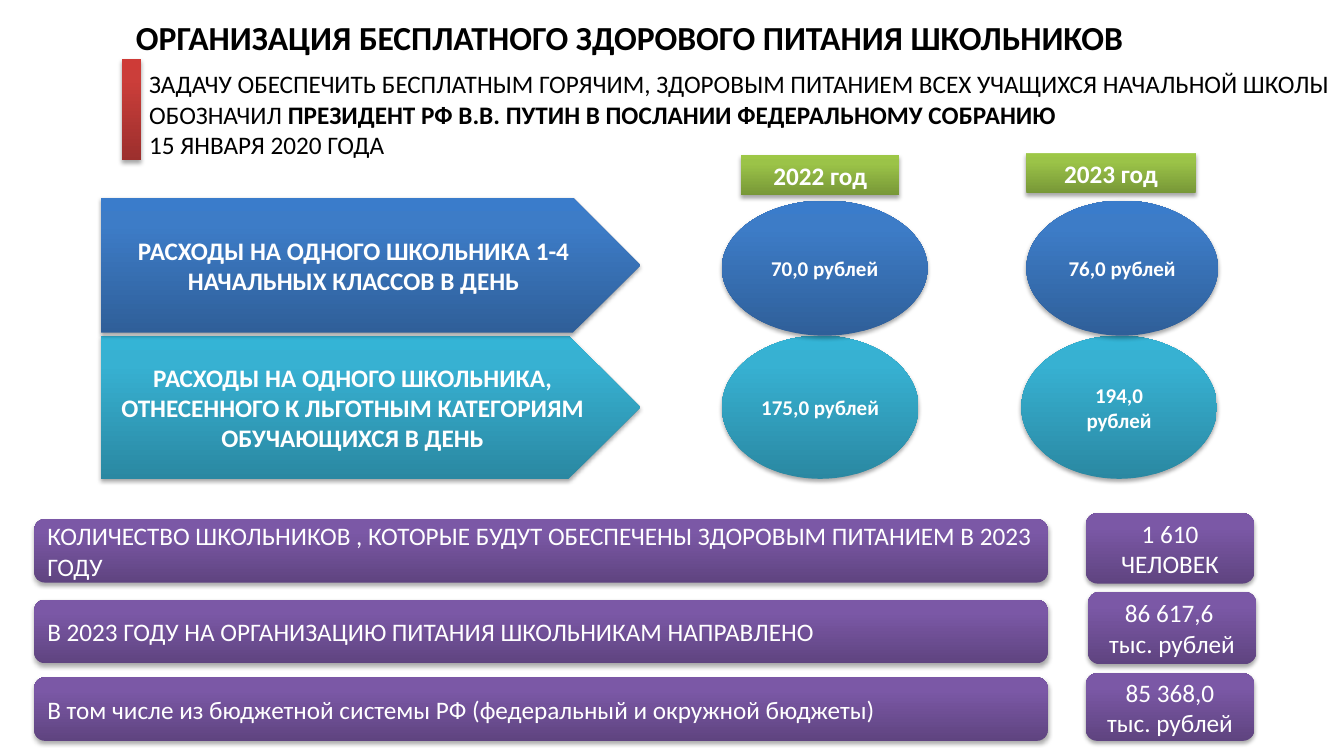
from copy import deepcopy

from lxml import etree
from pptx import Presentation
from pptx.dml.color import RGBColor
from pptx.enum import shapes, text
from pptx.oxml.ns import qn
from pptx.util import Inches, Pt

FONT = "Calibri"
WHITE = RGBColor(0xFF, 0xFF, 0xFF)
BLACK = RGBColor(0, 0, 0)


def gradient(*codes):
    return [RGBColor.from_string(code) for code in codes]


# Gradient colours at 0, 80 and 100 %, from bottom to top
STOPS = (0, 0.8, 1)
BLUE = gradient("2F5F99", "3D7CC7", "3A7CCB")
TEAL = gradient("2A88A2", "37B1D2", "34B4D6")
GREEN = gradient("779737", "9BC348", "9DC746")
PURPLE = gradient("5F4480", "7B58A6", "7C57A8")
RED = gradient("9C2F2D", "CB3E3A", "CE3B37")

TITLE = "ОРГАНИЗАЦИЯ БЕСПЛАТНОГО ЗДОРОВОГО ПИТАНИЯ ШКОЛЬНИКОВ"
# Paragraphs of (words, bold) runs
INTRO = [
    [("ЗАДАЧУ ОБЕСПЕЧИТЬ БЕСПЛАТНЫМ ГОРЯЧИМ, ЗДОРОВЫМ ПИТАНИЕМ ВСЕХ УЧАЩИХСЯ "
      "НАЧАЛЬНОЙ ШКОЛЫ ОБОЗНАЧИЛ ", False),
     ("ПРЕЗИДЕНТ РФ В.В. ПУТИН В ПОСЛАНИИ ФЕДЕРАЛЬНОМУ СОБРАНИЮ", True)],
    [("15 ЯНВАРЯ 2020 ГОДА", False)],
]
# Words, left, top, width
YEARS = [("2022 год", 7.35, 1.54, 1.57), ("2023 год", 10.18, 1.52, 1.68)]
# Expense, colours, top, height, daily costs as (words, left, width)
EXPENSES = [
    ("РАСХОДЫ НА ОДНОГО ШКОЛЬНИКА, ОТНЕСЕННОГО К ЛЬГОТНЫМ КАТЕГОРИЯМ "
     "ОБУЧАЮЩИХСЯ В ДЕНЬ", TEAL, 3.33, 1.42,
     [("175,0 рублей", 7.16, 1.95), ("194,0\nрублей", 10.13, 1.94)]),
    ("РАСХОДЫ НА ОДНОГО ШКОЛЬНИКА 1-4 НАЧАЛЬНЫХ КЛАССОВ В ДЕНЬ", BLUE, 1.96, 1.34,
     [("70,0 рублей", 7.16, 2.04), ("76,0 рублей", 10.18, 1.9)]),
]
COST_TOPS = {1.96: 1.99}  # the upper ovals sit a little below their arrow
# Label, its top, total, its left, top and height
TOTALS = [
    ("КОЛИЧЕСТВО ШКОЛЬНИКОВ , КОТОРЫЕ БУДУТ ОБЕСПЕЧЕНЫ ЗДОРОВЫМ ПИТАНИЕМ В 2023 ГОДУ",
     5.15, "1 610 ЧЕЛОВЕК", 10.77, 5.09, 0.7),
    ("В 2023 ГОДУ НА ОРГАНИЗАЦИЮ ПИТАНИЯ ШКОЛЬНИКАМ НАПРАВЛЕНО",
     5.95, "86 617,6 \nтыс. рублей", 10.79, 5.87, 0.72),
    ("В том числе из бюджетной системы РФ (федеральный и окружной бюджеты)",
     6.72, "85 368,0\nтыс. рублей", 10.77, 6.68, 0.67),
]

deck = Presentation()
deck.slide_width, deck.slide_height = Inches(13.33), Inches(7.5)
slide = deck.slides.add_slide(deck.slide_layouts[6])


def style(paragraph, size, color, bold=False, align=text.PP_ALIGN.LEFT):
    paragraph.alignment = align
    font = paragraph.font
    font.name, font.size, font.bold = FONT, Pt(size), bold
    font.color.rgb = color


def add_shadow(shape):
    shape.shadow.inherit = False
    effects = shape._element.spPr.find(qn("a:effectLst"))
    shadow = etree.SubElement(effects, qn("a:outerShdw"), blurRad="40000",
                              dist="23000", dir="5400000", rotWithShape="0")
    black = etree.SubElement(shadow, qn("a:srgbClr"), val="000000")
    etree.SubElement(black, qn("a:alpha"), val="35000")


def add_block(kind, box, colors, words="", size=18, bold=False,
              align=text.PP_ALIGN.CENTER, anchor=text.MSO_ANCHOR.MIDDLE):
    """Add a shaded shape with a soft shadow and white text."""
    block = slide.shapes.add_shape(kind, *map(Inches, box))
    block.line.fill.background()
    block.fill.gradient()
    block.fill.gradient_angle = 90
    stop_list = block._element.spPr.find(qn("a:gradFill")).find(qn("a:gsLst"))
    stop_list.append(deepcopy(stop_list[0]))
    for stop, position, color in zip(block.fill.gradient_stops, STOPS, colors):
        stop.position = position
        stop.color.rgb = color
    add_shadow(block)
    frame = block.text_frame
    frame.word_wrap = True
    frame.vertical_anchor = anchor
    frame.text = words
    for paragraph in frame.paragraphs:
        style(paragraph, size, WHITE, bold, align)


Kind = shapes.MSO_SHAPE

title = slide.shapes.add_textbox(*map(Inches, (1.25, 0, 12, 0.73))).text_frame
title.word_wrap = True
title.vertical_anchor = text.MSO_ANCHOR.MIDDLE
title.text = TITLE
style(title.paragraphs[0], 24, BLACK, bold=True)

for expense, colors, top, height, costs in EXPENSES:
    add_block(Kind.PENTAGON, (1, top, 5.35, height), colors, expense, bold=True)
    for cost, left, width in costs:
        add_block(Kind.OVAL, (left, COST_TOPS.get(top, top), width, height), colors,
                  cost, size=15, bold=True)

for year, left, top, width in YEARS:
    add_block(Kind.RECTANGLE, (left, top, width, 0.4), GREEN, year, bold=True,
              anchor=text.MSO_ANCHOR.TOP)

for label, label_top, total, left, top, height in TOTALS:
    add_block(Kind.ROUNDED_RECTANGLE, (0.34, label_top, 10.05, 0.63), PURPLE, label,
              align=text.PP_ALIGN.LEFT)
    add_block(Kind.ROUNDED_RECTANGLE, (left, top, 1.67, height), PURPLE, total)

intro = slide.shapes.add_shape(Kind.RECTANGLE, *map(Inches, (1.4, 0.74, 11.89, 0.78)))
intro.shadow.inherit = False
intro.fill.solid()
intro.fill.fore_color.rgb = WHITE
intro.line.fill.background()
frame = intro.text_frame
frame.word_wrap = True
frame.vertical_anchor = text.MSO_ANCHOR.MIDDLE
frame.margin_left = frame.margin_right = Inches(0.08)
frame.margin_top = frame.margin_bottom = Inches(0.04)
frame.text = "\n" * (len(INTRO) - 1)
for paragraph, runs in zip(frame.paragraphs, INTRO):
    style(paragraph, 18, BLACK)
    for words, bold in runs:
        run = paragraph.add_run()
        run.text, run.font.bold = words, bold

add_block(Kind.RECTANGLE, (1.21, 0.59, 0.19, 1), RED)

deck.save("out.pptx")
